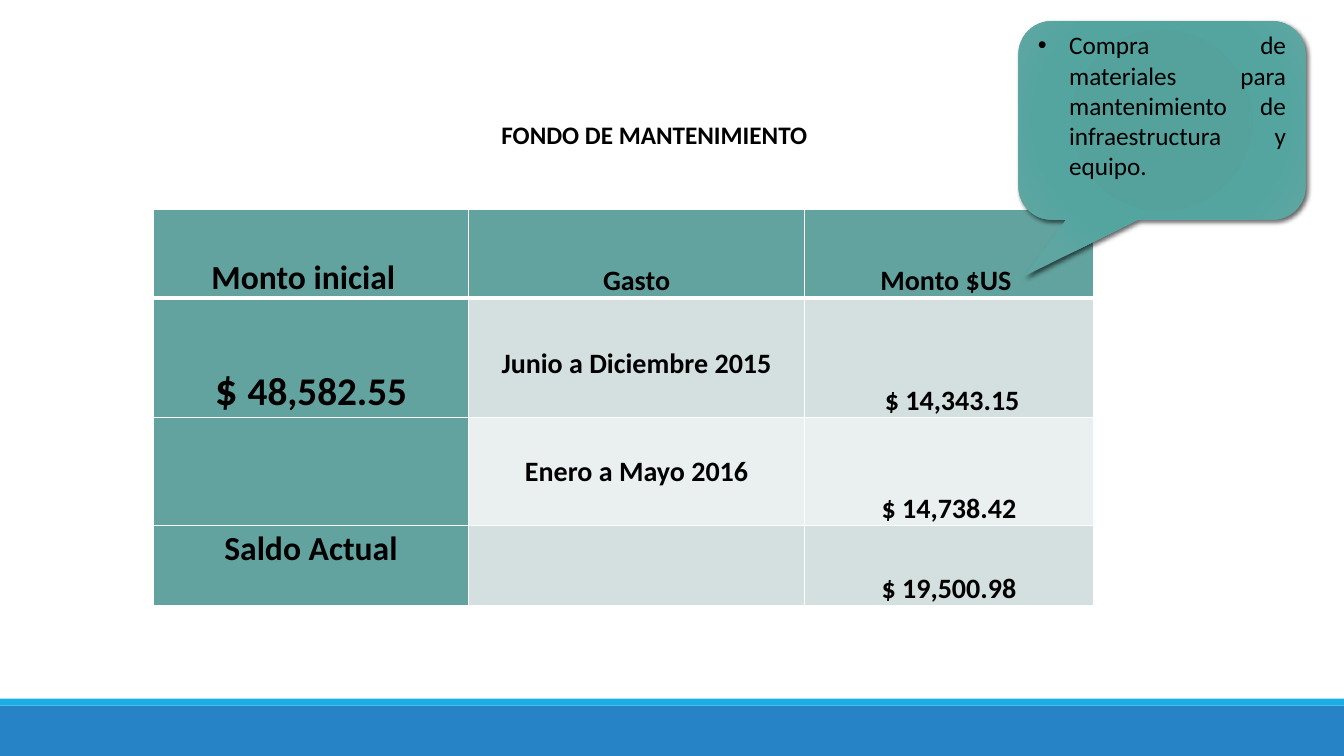
"""Build the maintenance fund slide."""
from lxml.etree import SubElement
from pptx import Presentation
from pptx.dml.color import RGBColor
from pptx.enum.shapes import MSO_SHAPE
from pptx.enum.text import MSO_ANCHOR, PP_ALIGN
from pptx.oxml.ns import qn
from pptx.util import Inches, Pt

WIDTH, HEIGHT = Inches(13.33), Inches(7.5)
FONT = "Calibri"
COLORS = {
    "text": "000000", "border": "FFFFFF", "bar": "2683C6", "stripe": "1CADE4",
    "teal": "62A39F", "band": "D3E0DF", "light": "EAF0F0", "shadow": "000000",
}
CALLOUT_STOPS = [(0, "52A19C"), (34, "55A19C"), (70, "54A5A0"), (100, "5FA6A2")]
COLUMN_SHARES = [23.48, 24.98, 21.52]
ROW_SHARES = [11.73, 15.8, 14.27, 10.53]
ROW_FILLS = ["teal", "band", "light", "band"]
LIFT = Inches(0.36)
CELLS = [
    [[("Monto inicial  ", 24)], [("Gasto", 20)], [("Monto $US ", 20)]],
    [[("$ ", 32), ("48,582.55", 28)], [("Junio a Diciembre 2015", 20)], [(" $ 14,343.15", 20)]],
    [[], [("Enero a Mayo 2016", 20)], [("$ 14,738.42", 20)]],
    [[("Saldo Actual", 24)], [], [("$ 19,500.98", 20)]],
]
LIFTED_CELLS = {(1, 1), (2, 1), (3, 0)}


def across(percent):
    """Return a share of the slide width."""
    return round(WIDTH * percent / 100)


def down(percent):
    """Return a share of the slide height."""
    return round(HEIGHT * percent / 100)


def place(left, top, width, height):
    """Turn slide percentages into a position and size."""
    return across(left), down(top), across(width), down(height)


def color(name):
    """Look up a named colour."""
    return RGBColor.from_string(COLORS[name])


def style_run(run, size, bold):
    """Set the font of one run."""
    run.font.name = FONT
    run.font.size = Pt(size)
    run.font.bold = bold
    run.font.color.rgb = color("text")


def add_color(parent, value):
    """Append an RGB colour element."""
    return SubElement(parent, qn("a:srgbClr"), val=value)


def add_bar(slide, box, fill):
    """Draw a plain footer bar."""
    shape = slide.shapes.add_shape(MSO_SHAPE.RECTANGLE, *box)
    shape.shadow.inherit = False
    shape.fill.solid()
    shape.fill.fore_color.rgb = color(fill)
    shape.line.fill.background()


def add_title(slide, text, box):
    """Write the centred heading."""
    text_frame = slide.shapes.add_textbox(*box).text_frame
    text_frame.word_wrap = True
    text_frame.text = text
    paragraph = text_frame.paragraphs[0]
    paragraph.alignment = PP_ALIGN.CENTER
    style_run(paragraph.runs[0], 18, True)


def set_borders(cell, top, bottom):
    """Give a cell white borders of the given widths."""
    properties = cell._tc.get_or_add_tcPr()
    for side, width in zip("LRTB", (1, 1, top, bottom)):
        line = SubElement(properties, qn(f"a:ln{side}"), w=str(Pt(width)))
        add_color(SubElement(line, qn("a:solidFill")), COLORS["border"])


def fill_cell(cell, parts, fill, lift):
    """Write and colour one table cell."""
    cell.fill.solid()
    cell.fill.fore_color.rgb = color(fill)
    cell.vertical_anchor = MSO_ANCHOR.BOTTOM
    cell.margin_left = cell.margin_right = Inches(0.05)
    cell.margin_top, cell.margin_bottom = 0, lift
    paragraph = cell.text_frame.paragraphs[0]
    paragraph.alignment = PP_ALIGN.CENTER
    paragraph.line_spacing = 1.07
    for text, size in parts:
        run = paragraph.add_run()
        run.text = text
        style_run(run, size, True)


def add_fund_table(slide, left, top):
    """Draw the table of fund amounts."""
    box = place(left, top, sum(COLUMN_SHARES), sum(ROW_SHARES))
    table = slide.shapes.add_table(len(CELLS), len(COLUMN_SHARES), *box).table
    for column, share in zip(table.columns, COLUMN_SHARES):
        column.width = across(share)
    for row, share in zip(table.rows, ROW_SHARES):
        row.height = down(share)
    for row_index, row_cells in enumerate(CELLS):
        for column_index, parts in enumerate(row_cells):
            cell = table.cell(row_index, column_index)
            set_borders(cell, 3 if row_index == 1 else 1, 3 if row_index == 0 else 1)
            fill = "teal" if column_index == 0 else ROW_FILLS[row_index]
            lift = LIFT if (row_index, column_index) in LIFTED_CELLS else 0
            fill_cell(cell, parts, fill, lift)


def add_radial_fill(shape, stops):
    """Fill a shape with a circular gradient."""
    shape.fill.gradient()
    gradient = shape._element.spPr.find(qn("a:gradFill"))
    for child in list(gradient):
        gradient.remove(child)
    stop_list = SubElement(gradient, qn("a:gsLst"))
    for position, value in stops:
        add_color(SubElement(stop_list, qn("a:gs"), pos=str(position * 1000)), value)
    circle = SubElement(gradient, qn("a:path"), {"path": "circle"})
    SubElement(circle, qn("a:fillToRect"), {side: "100000" for side in "ltrb"})


def add_shadow(shape):
    """Give a shape a soft diagonal shadow."""
    shape.shadow.inherit = False
    effects = shape._element.spPr.find(qn("a:effectLst"))
    shadow = SubElement(effects, qn("a:outerShdw"), blurRad=str(Pt(3.5)),
                        dist=str(Pt(2)), dir="2700000", rotWithShape="0")
    SubElement(add_color(shadow, COLORS["shadow"]), qn("a:alpha"), val="60000")


def add_callout(slide, text, box):
    """Draw the speech bubble with its bullet."""
    shape = slide.shapes.add_shape(MSO_SHAPE.ROUNDED_RECTANGULAR_CALLOUT, *box)
    for index, value in enumerate((-0.48, 0.785, 0.167)):
        shape.adjustments[index] = value
    add_radial_fill(shape, CALLOUT_STOPS)
    shape.line.fill.background()
    add_shadow(shape)
    text_frame = shape.text_frame
    text_frame.word_wrap = True
    text_frame.vertical_anchor = MSO_ANCHOR.MIDDLE
    text_frame.margin_bottom = Inches(0.35)
    text_frame.text = text
    paragraph = text_frame.paragraphs[0]
    paragraph.alignment = PP_ALIGN.JUSTIFY
    style_run(paragraph.runs[0], 18, False)
    properties = paragraph._p.get_or_add_pPr()
    properties.set("marL", str(Inches(0.31)))
    properties.set("indent", str(Inches(-0.31)))
    SubElement(properties, qn("a:buFont"), typeface="Arial")
    SubElement(properties, qn("a:buChar"), char="•")


def main():
    """Build and save the slide."""
    presentation = Presentation()
    presentation.slide_width, presentation.slide_height = WIDTH, HEIGHT
    slide = presentation.slides.add_slide(presentation.slide_layouts[6])
    add_bar(slide, place(0, 93.33, 100, 6.67), "bar")
    add_bar(slide, place(0, 92.4, 100, 0.93), "stripe")
    add_fund_table(slide, 11.4, 27.73)
    add_callout(slide, "Compra de materiales para mantenimiento de infraestructura y equipo.",
                place(75.77, 2.8, 21.38, 26.27))
    add_title(slide, "FONDO DE MANTENIMIENTO", place(22.81, 15.07, 51.76, 5.33))
    presentation.save("out.pptx")


if __name__ == "__main__":
    main()
